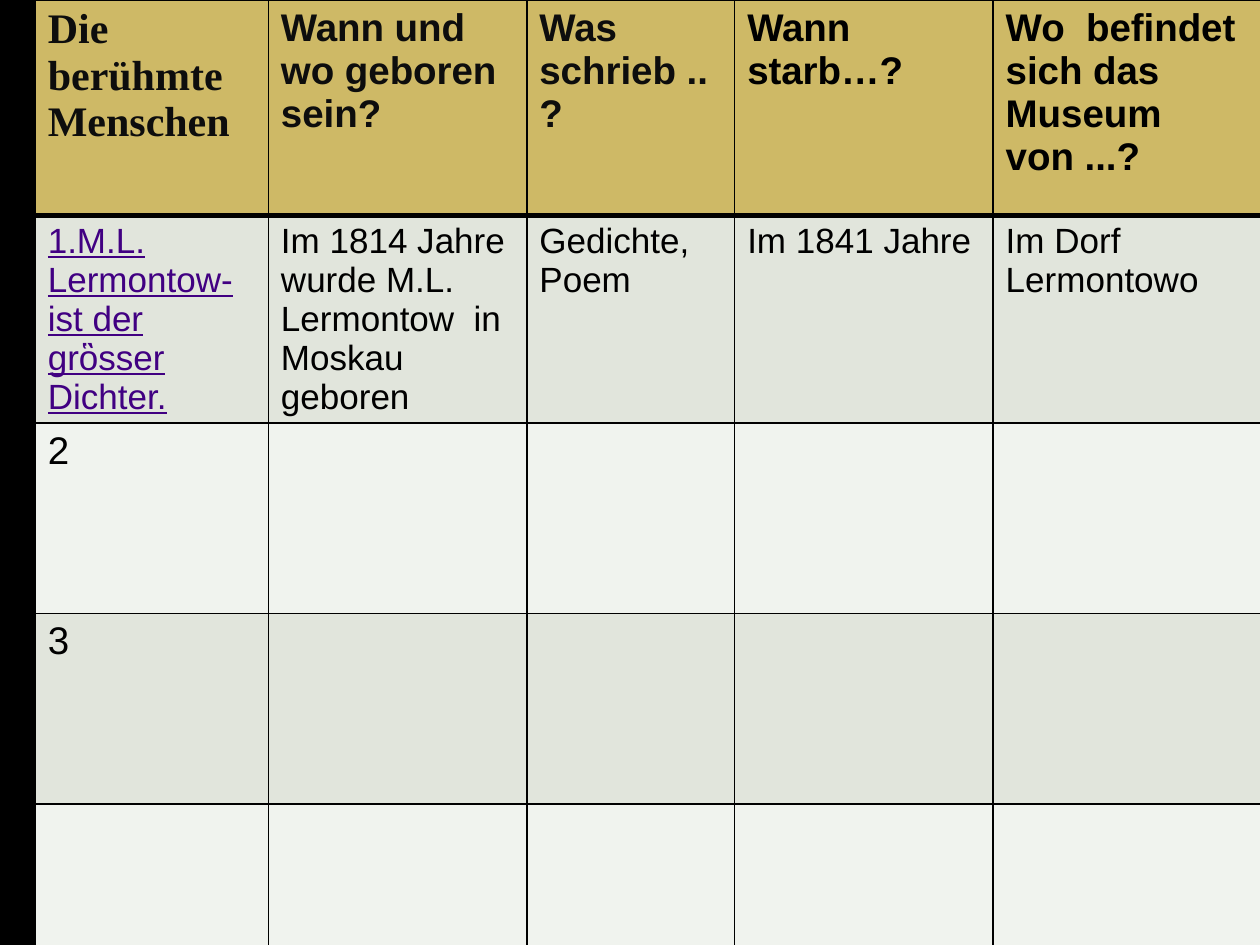
from lxml.etree import SubElement
from pptx import Presentation
from pptx.dml.color import RGBColor as RGB
from pptx.oxml.ns import qn
from pptx.util import Cm, Pt

BLACK = RGB(0x00, 0x00, 0x00)
DARK = RGB(0x0D, 0x0D, 0x0D)
GOLD = RGB(0xCE, 0xB9, 0x66)
SAGE = RGB(0xE1, 0xE5, 0xDC)
PALE = RGB(0xF0, 0xF3, 0xEE)
VIOLET = RGB(0x41, 0x00, 0x82)

COL_WIDTHS = [4.7, 5.21, 4.19, 5.21, 6.1]
ROW_HEIGHTS = [4.34] + [3.84] * 4
ROW_FILLS = [GOLD, SAGE, PALE, SAGE, PALE]

HEAD = {"size": Pt(22), "bold": True, "color": DARK}
HEAD_BLACK = {**HEAD, "color": BLACK}
TITLE = {**HEAD, "size": Pt(24), "name": "Times New Roman"}
BODY = {"size": Pt(20)}
LINKED = {**BODY, "color": VIOLET, "underline": True}
NUMBER = {"size": Pt(22)}

ROWS = [
    [
        ("Die berühmte Menschen", TITLE),
        ("Wann und wo geboren sein?", HEAD),
        ("Was\nschrieb ..?", HEAD),
        ("Wann starb…?", HEAD_BLACK),
        ("Wo  befindet sich das Museum von ...?", HEAD_BLACK),
    ],
    [
        ("1.M.L. Lermontow-ist der grὃsser Dichter.", LINKED),
        ("Im 1814 Jahre wurde M.L. Lermontow  in Moskau geboren", BODY),
        ("Gedichte, Poem", BODY),
        ("Im 1841 Jahre", BODY),
        ("Im Dorf Lermontowo", BODY),
    ],
    [("2", NUMBER)],
    [("3", NUMBER)],
    [],
]


class SlideBuilder:
    base = {"name": "Arial", "bold": False, "underline": False, "color": BLACK}

    def __init__(self, prs):
        self.s = prs.slides.add_slide(prs.slide_layouts[6])

    def background(self, color):
        fill = self.s.background.fill
        fill.solid()
        fill.fore_color.rgb = color

    def text(self, tf, text, style):
        tf.text = text
        for p in tf.paragraphs:
            for r in p.runs:
                for key, value in {**self.base, **style}.items():
                    if key == "color":
                        r.font.color.rgb = value
                    else:
                        setattr(r.font, key, value)

    def borders(self, cell, widths):
        tc_pr = cell._tc.get_or_add_tcPr()
        for i, (side, width) in enumerate(widths.items()):
            ln = tc_pr.makeelement(qn(f"a:ln{side}"), {"w": str(Pt(width))})
            fill = SubElement(ln, qn("a:solidFill"))
            SubElement(fill, qn("a:srgbClr"), val=str(BLACK))
            tc_pr.insert(i, ln)

    def table(self, left, top, widths, heights, fills, rows):
        frame = self.s.shapes.add_table(
            len(heights), len(widths), Cm(left), Cm(top), Cm(sum(widths)), Cm(sum(heights))
        )
        tbl = frame.table
        for col, width in zip(tbl.columns, widths):
            col.width = Cm(width)
        for i, (row, height, color) in enumerate(zip(tbl.rows, heights, fills)):
            row.height = Cm(height)
            for cell in row.cells:
                cell.fill.solid()
                cell.fill.fore_color.rgb = color
                self.borders(cell, {"L": 1, "R": 1, "T": 3 if i == 1 else 1, "B": 3 if i == 0 else 1})
            for cell, (text, style) in zip(row.cells, rows[i]):
                self.text(cell.text_frame, text, style)


def main():
    prs = Presentation()
    prs.slide_width, prs.slide_height = Cm(25.4), Cm(19.05)
    builder = SlideBuilder(prs)
    builder.background(BLACK)
    builder.table(0.71, 0, COL_WIDTHS, ROW_HEIGHTS, ROW_FILLS, ROWS)
    prs.save("out.pptx")


if __name__ == "__main__":
    main()
